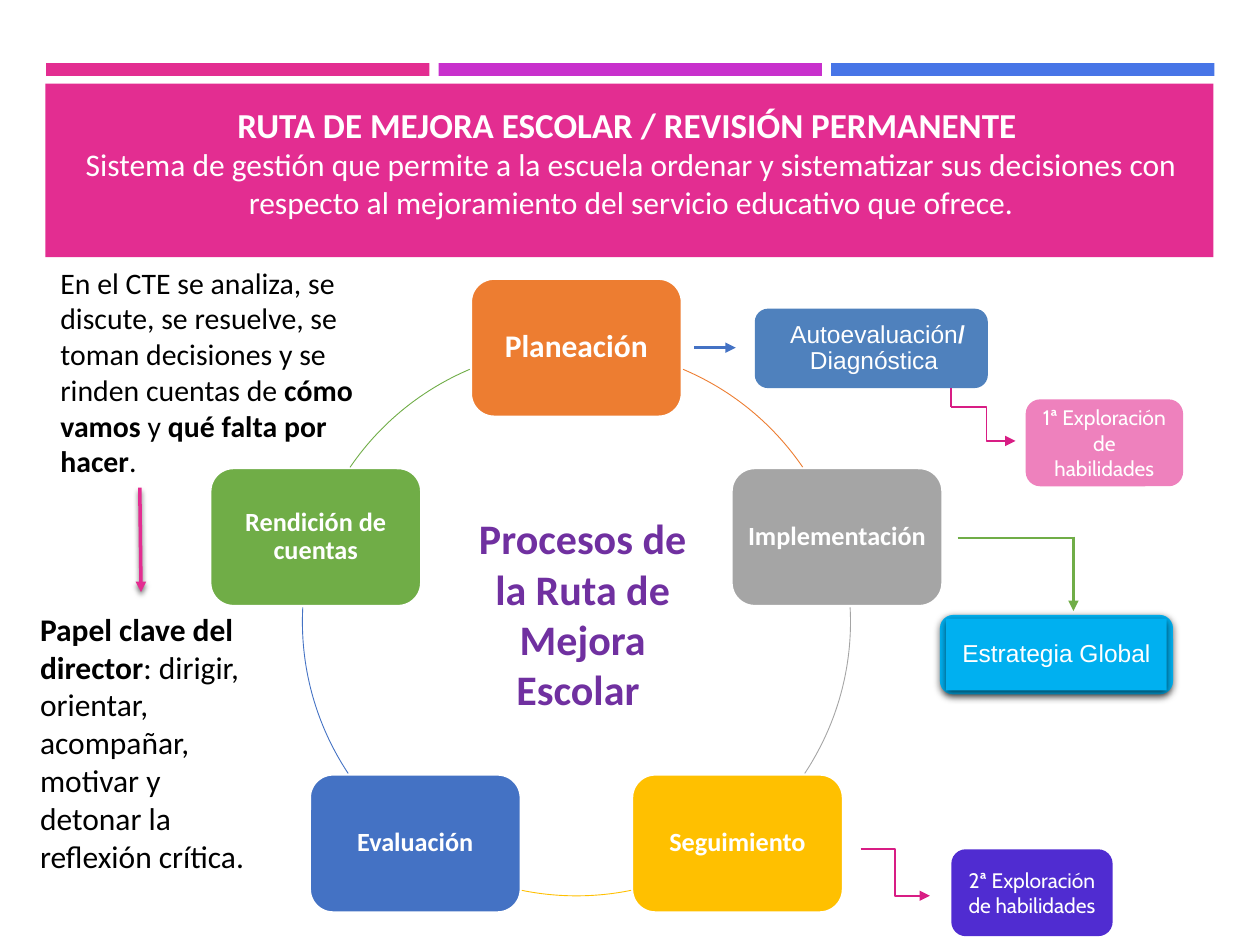
import math

import pptx
import pptx.dml.color
import pptx.enum.shapes
import pptx.enum.text
import pptx.oxml
import pptx.oxml.ns
import pptx.util
from lxml import etree

Pt = pptx.util.Pt
RGBColor = pptx.dml.color.RGBColor
qn = pptx.oxml.ns.qn
SHAPE = pptx.enum.shapes.MSO_SHAPE
CONNECTOR = pptx.enum.shapes.MSO_CONNECTOR
ALIGN = pptx.enum.text.PP_ALIGN
ANCHOR = pptx.enum.text.MSO_ANCHOR

WHITE = RGBColor(0xFF, 0xFF, 0xFF)
BLACK = RGBColor(0, 0, 0)
PINK = RGBColor(0xE3, 0x2D, 0x91)
DARK_PINK = RGBColor(0xD8, 0x1D, 0x84)
LIGHT_PINK = RGBColor(0xEE, 0x81, 0xBD)
MAGENTA = RGBColor(0xC8, 0x30, 0xCC)
BAR_BLUE = RGBColor(0x47, 0x75, 0xE7)
ORANGE = RGBColor(0xED, 0x7D, 0x31)
GRAY = RGBColor(0xA5, 0xA5, 0xA5)
GOLD = RGBColor(0xFF, 0xC0, 0x00)
BLUE = RGBColor(0x44, 0x72, 0xC4)
GREEN = RGBColor(0x70, 0xAD, 0x47)
STEEL = RGBColor(0x4F, 0x81, 0xBD)
SKY = RGBColor(0x00, 0xB0, 0xF0)
PURPLE = RGBColor(0x70, 0x30, 0xA0)
VIOLET = RGBColor(0x50, 0x2C, 0xD1)

# Cycle geometry
CENTER_X, CENTER_Y, RADIUS = 329.4, 355.3, 156.6
NODE_WIDTH, NODE_HEIGHT = 120.2, 78.5

# Name, text size, colour, start and end angle of the arc that follows
STAGES = [
    ("Planeación", 18, ORANGE, 292.9, 325.7),
    ("Implementación", 15, GRAY, 357, 33.6),
    ("Seguimiento", 15, GOLD, 78.5, 101.5),
    ("Evaluación", 15, BLUE, 146.4, 183),
    ("Rendición de cuentas", 15, GREEN, 214.3, 247.1),
]


def write_text(shape, *runs, size, font="Calibri", color=WHITE, align=ALIGN.CENTER,
               anchor=ANCHOR.MIDDLE, spacing=None, insets=(7.2, 3.6, 7.2, 3.6)):
    """Fill a shape with one paragraph of (text, bold[, size]) runs; None breaks the line."""
    frame = shape.text_frame
    frame.word_wrap = True
    frame.vertical_anchor = anchor
    frame.margin_left, frame.margin_top, frame.margin_right, frame.margin_bottom = map(Pt, insets)
    paragraph = frame.paragraphs[0]
    paragraph.alignment = align
    if spacing:
        paragraph.line_spacing = spacing
    for item in runs:
        if item is None:
            paragraph.add_line_break()
            continue
        text, bold, *own_size = item
        run = paragraph.add_run()
        run.text = text
        run.font.name, run.font.bold = font, bold
        run.font.size = Pt(own_size[0] if own_size else size)
        run.font.color.rgb = color


def add_text(slide, box, *runs, **text_format):
    write_text(slide.shapes.add_textbox(*map(Pt, box)), *runs, **text_format)


def add_shadow(effects, blur, distance, opacity):
    shadow = etree.SubElement(effects, qn("a:outerShdw"), blurRad=str(Pt(blur)),
                              dist=str(Pt(distance)), dir="5400000", rotWithShape="0")
    color = etree.SubElement(shadow, qn("a:srgbClr"), val=str(BLACK))
    etree.SubElement(color, qn("a:alpha"), val=str(opacity * 1000))


def add_box(slide, kind, box, color, outline=None, shadow=None):
    shape = slide.shapes.add_shape(kind, *map(Pt, box))
    shape.shadow.inherit = False
    shape.fill.solid()
    shape.fill.fore_color.rgb = color
    if outline is None:
        shape.line.fill.background()
    else:
        shape.line.color.rgb = outline
        shape.line.width = Pt(1)
    if shadow:
        add_shadow(shape._element.spPr.find(qn("a:effectLst")), *shadow)
    return shape


def add_line(slide, points, color, width, kind=CONNECTOR.STRAIGHT, arrow=True,
             shadow=None, bend=None):
    connector = slide.shapes.add_connector(kind, *map(Pt, points))
    connector.line.color.rgb = color
    connector.line.width = Pt(width)
    properties = connector._element.spPr
    if arrow:
        etree.SubElement(properties.find(qn("a:ln")), qn("a:tailEnd"), type="triangle")
    effects = etree.SubElement(properties, qn("a:effectLst"))
    if shadow:
        add_shadow(effects, *shadow)
    if bend:
        guides = properties.find(qn("a:prstGeom")).find(qn("a:avLst"))
        etree.SubElement(guides, qn("a:gd"), name="adj1", fmla=f"val {round(bend * 100000)}")


def add_arc(slide, start, end, color):
    arc = slide.shapes.add_shape(SHAPE.ARC, Pt(CENTER_X - RADIUS), Pt(CENTER_Y - RADIUS),
                                 Pt(2 * RADIUS), Pt(2 * RADIUS))
    arc.shadow.inherit = False
    arc.fill.background()
    arc.line.color.rgb = color
    arc.line.width = Pt(0.5)
    # Angles are stored in 60000ths of a degree, adjustments in 100000ths
    arc.adjustments[0], arc.adjustments[1] = start * 0.6, end * 0.6


def add_header(slide):
    for index, color in enumerate((PINK, MAGENTA, BAR_BLUE)):
        add_box(slide, SHAPE.RECTANGLE, (26.4 + 224.3 * index, 36, 219, 7.4), color)
    add_box(slide, SHAPE.RECTANGLE, (26, 47.8, 667.4, 99.2), PINK)
    add_text(slide, (28.8, 49, 663.8, 87.1),
             ("RUTA DE MEJORA ESCOLAR / REVISIÓN PERMANENTE ", True, 20), None,
             ("Sistema de gestión que permite a la escuela ordenar y sistematizar sus decisiones "
              "con respecto al mejoramiento del servicio educativo que ofrece.", False), size=18)


def add_cycle(slide):
    for index, (name, size, color, start, end) in enumerate(STAGES):
        angle = math.radians(72 * index - 90)
        left = CENTER_X + RADIUS * math.cos(angle) - NODE_WIDTH / 2
        top = CENTER_Y + RADIUS * math.sin(angle) - NODE_HEIGHT / 2
        node = add_box(slide, SHAPE.ROUNDED_RECTANGLE,
                       (left, top, NODE_WIDTH, NODE_HEIGHT), color, outline=WHITE)
        write_text(node, (name, True), size=size, spacing=0.9, insets=(3, 4, 3, 4))
        add_arc(slide, start, end, color)
    add_text(slide, (257, 289.4, 151.9, 123.8), ("Procesos de la Ruta de Mejora Escolar ", True),
             size=24, color=PURPLE, anchor=ANCHOR.TOP)


def add_details(slide):
    # Diagnosis
    diagnosis = add_box(slide, SHAPE.ROUNDED_RECTANGLE, (431.3, 176.4, 133.2, 45.4), STEEL)
    write_text(diagnosis, ("Autoevaluación", False), ("/ ", True), ("Diagnóstica ", False),
               size=14, font="Arial", spacing=0.9, insets=(10.8, 3.6, 3.6, 3.6))
    add_line(slide, (396.7, 198.7, 420.5, 198.7), BLUE, 1.5)

    # Global strategy
    glow = (4.5, 1.5, 63)
    add_box(slide, SHAPE.ROUNDED_RECTANGLE, (537.1, 351.4, 133.2, 45.4), SKY, shadow=glow)
    strategy = add_box(slide, SHAPE.RECTANGLE, (540.7, 353.5, 126, 41), SKY, shadow=glow)
    write_text(strategy, ("Estrategia Global", False), size=14, font="Arial", spacing=0.9,
               insets=(3.6, 3.6, 3.6, 3.6))
    add_line(slide, (547.2, 307.4, 613.4, 307.4), GREEN, 1.5, arrow=False)
    add_line(slide, (613.4, 306.7, 613.4, 349.2), GREEN, 1.5)

    # Skill explorations
    for text, box, color in (
        ("1ª Exploración de habilidades", (586.1, 228.2, 90, 49.7), LIGHT_PINK),
        ("2ª Exploración de habilidades", (543.6, 485.3, 92.2, 49.7), VIOLET),
    ):
        exploration = add_box(slide, SHAPE.ROUNDED_RECTANGLE, box, color)
        write_text(exploration, (text, False), size=12, font="Cabin")
    add_line(slide, (543.6, 232.6, 580.3, 252), DARK_PINK, 1, kind=CONNECTOR.ELBOW, bend=0.55)
    add_line(slide, (543.6, 232.6, 543.6, 221.8), DARK_PINK, 1, arrow=False)
    add_line(slide, (491.8, 485.3, 531.4, 511.9), DARK_PINK, 1, kind=CONNECTOR.ELBOW)


def add_side_notes(slide):
    note_format = {"color": BLACK, "align": ALIGN.LEFT, "anchor": ANCHOR.TOP}
    add_text(slide, (27.4, 147.6, 202.3, 131),
             ("En el CTE se analiza, se discute, se resuelve, se toman decisiones y se rinden "
              "cuentas de ", False),
             ("cómo vamos ", True), ("y ", False), ("qué falta por hacer", True), (".", False),
             size=17, **note_format)
    add_line(slide, (79.9, 278.6, 80.6, 338.4), PINK, 2, shadow=(3, 2, 55))
    add_text(slide, (15.8, 344.9, 138.2, 159.8), ("Papel clave del director", True),
             (": dirigir, orientar, acompañar, motivar y detonar la reflexión crítica.", False),
             size=18, **note_format)


def main():
    presentation = pptx.Presentation()
    presentation.slide_width, presentation.slide_height = Pt(720), Pt(540)
    slide = presentation.slides.add_slide(presentation.slide_layouts[6])
    add_header(slide)
    add_cycle(slide)
    add_details(slide)
    add_side_notes(slide)
    presentation.save("out.pptx")


if __name__ == "__main__":
    main()
